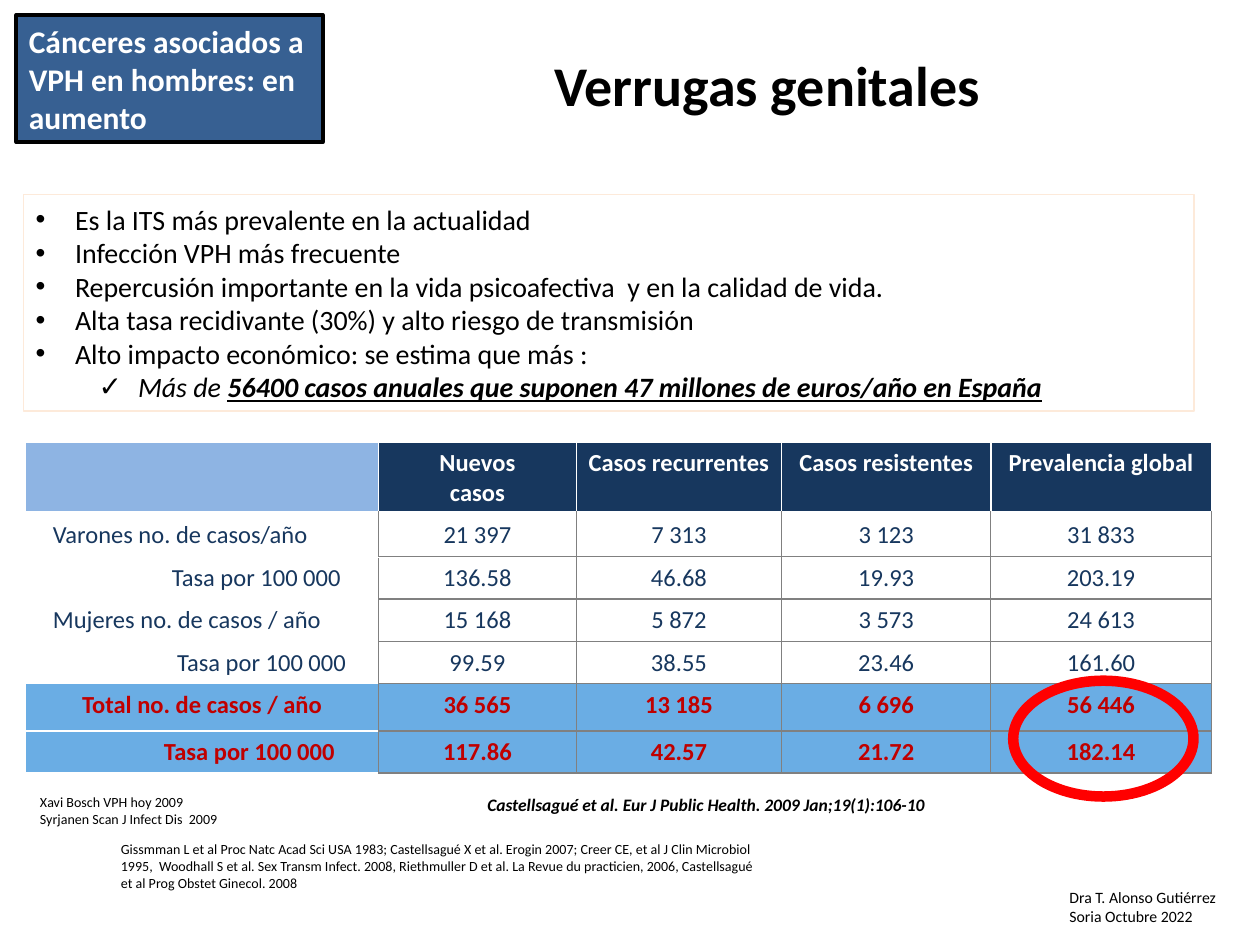
from dataclasses import dataclass, field

from lxml.etree import SubElement
from pptx import Presentation
from pptx.dml.color import RGBColor
from pptx.enum.shapes import MSO_SHAPE
from pptx.enum.text import MSO_ANCHOR, PP_ALIGN
from pptx.oxml import parse_xml
from pptx.oxml.ns import nsdecls, qn
from pptx.util import Pt


@dataclass(frozen=True)
class Theme:
    font: str = "Calibri"
    black: str = "000000"
    white: str = "FFFFFF"
    navy: str = "17375E"
    blue: str = "376092"
    pale_blue: str = "8EB4E3"
    total_blue: str = "6AADE4"
    cream: str = "FDEADA"
    grey: str = "808080"
    dark_red: str = "C00000"
    red: str = "FF0000"
    title: float = 32
    banner: float = 18
    body: float = 16
    table: float = 14
    source: float = 10
    author: float = 9
    note: float = 8


T = Theme()


@dataclass
class Para:
    runs: list  # (text, format dict) pairs
    align: PP_ALIGN = PP_ALIGN.LEFT
    left: float = 0
    hanging: float = 0
    bullet: str = ""


@dataclass
class Block:
    box: tuple  # left, top, width, height
    paras: list
    size: float
    color: str = T.black
    fill: str = ""
    line: tuple = ()  # colour, width
    shape: MSO_SHAPE = MSO_SHAPE.RECTANGLE


@dataclass
class Row:
    label: str
    values: list
    height: float
    indent: float = 0
    total: bool = False
    align: PP_ALIGN = PP_ALIGN.LEFT
    line: str = field(default=T.grey)


def plain(text: str, **kw) -> Para:
    return Para([(text, {})], **kw)


def write(tf, paras: list, size: float, color: str, **base) -> None:
    """Fill a text frame with formatted paragraphs."""
    tf.word_wrap = True
    for i, para in enumerate(paras):
        p = tf.paragraphs[0] if i == 0 else tf.add_paragraph()
        p.alignment = para.align
        pPr = p._p.get_or_add_pPr()
        if para.left:
            pPr.set("marL", str(Pt(para.left)))
            pPr.set("indent", str(-Pt(para.hanging)))
        if para.bullet:
            SubElement(pPr, qn("a:buFont")).set("typeface", "Arial")
            SubElement(pPr, qn("a:buChar")).set("char", para.bullet)
        for text, extra in para.runs:
            r = p.add_run()
            r.text = text
            fmt = {"name": T.font, "size": Pt(size), **base, **extra}
            for key, value in fmt.items():
                setattr(r.font, key, value)
            r.font.color.rgb = RGBColor.from_string(color)


def add_block(s, b: Block, **base) -> None:
    """Draw a text box, or a shape when it has a fill or an outline."""
    box = [Pt(v) for v in b.box]
    if b.line:
        sp = s.shapes.add_shape(b.shape, *box)
        sp.shadow.inherit = False
        if b.fill:
            sp.fill.solid()
            sp.fill.fore_color.rgb = RGBColor.from_string(b.fill)
        else:
            sp.fill.background()
        sp.line.color.rgb = RGBColor.from_string(b.line[0])
        sp.line.width = Pt(b.line[1])
    else:
        sp = s.shapes.add_textbox(*box)
    sp.text_frame.vertical_anchor = MSO_ANCHOR.MIDDLE if b.line else MSO_ANCHOR.TOP
    write(sp.text_frame, b.paras, b.size, b.color, **base)


def style_cell(cell, fill: str, borders: dict) -> None:
    """Set a cell's fill, margins and borders (side: colour, width)."""
    cell.fill.solid()
    cell.fill.fore_color.rgb = RGBColor.from_string(fill)
    cell.margin_left = cell.margin_right = Pt(6.5)
    cell.margin_top = cell.margin_bottom = Pt(3.6)
    tcPr = cell._tc.get_or_add_tcPr()
    for i, side in enumerate("LRTB"):
        color, width = borders[side]
        tcPr.insert(i, parse_xml(
            f'<a:ln{side} {nsdecls("a")} w="{Pt(width)}"><a:solidFill>'
            f'<a:srgbClr val="{color}"/></a:solidFill></a:ln{side}>'))


def add_cases_table(s, left: float, top: float, widths: list,
                    heads: list, head_height: float, rows: list) -> None:
    heights = [head_height] + [row.height for row in rows]
    tbl = s.shapes.add_table(len(heights), len(widths), Pt(left), Pt(top),
                             Pt(sum(widths)), Pt(sum(heights))).table
    tbl.first_row = tbl.horz_banding = False
    for col, width in zip(tbl.columns, widths):
        col.width = Pt(width)
    for tr, height in zip(tbl.rows, heights):
        tr.height = Pt(height)
    thin, thick, rule = (T.white, 1), (T.white, 3), (T.grey, 0.75)

    # Header row
    for j, lines in enumerate(heads):
        cell = tbl.cell(0, j)
        style_cell(cell, T.navy if lines else T.pale_blue,
                   {"L": thin, "R": thin, "T": thin, "B": thick})
        write(cell.text_frame, [plain(t, align=PP_ALIGN.CENTER) for t in lines],
              T.table, T.white, bold=True)

    # Body rows: open label column, ruled value columns
    for i, row in enumerate(rows, 1):
        fill, color = (T.total_blue, T.dark_red) if row.total else (T.white, T.navy)
        for j, text in enumerate([row.label] + row.values):
            edge = rule if j else thin
            cell = tbl.cell(i, j)
            style_cell(cell, fill, {"L": edge, "R": rule, "B": edge,
                                    "T": thick if i == 1 else edge})
            para = (plain(text, align=PP_ALIGN.CENTER) if j
                    else plain(text, align=row.align, left=row.indent))
            write(cell.text_frame, [para], T.table, color, bold=row.total)


def main() -> None:
    prs = Presentation()
    prs.slide_width, prs.slide_height = Pt(720), Pt(540)
    s = prs.slides.add_slide(prs.slide_layouts[5])

    # Title
    title = s.shapes.title
    for key, value in zip(("left", "top", "width", "height"), (273, 15, 331, 66)):
        setattr(title, key, Pt(value))
    title.text_frame.vertical_anchor = MSO_ANCHOR.MIDDLE
    write(title.text_frame, [plain("Verrugas genitales", align=PP_ALIGN.CENTER)],
          T.title, T.black, bold=True)

    # Key points
    points = ["Es la ITS más prevalente en la actualidad",
              "Infección VPH más frecuente",
              "Repercusión importante en la vida psicoafectiva  y en la calidad de vida.",
              "Alta tasa recidivante (30%) y alto riesgo de transmisión",
              "Alto impacto económico: se estima que más :"]
    paras = [plain(t, left=22.5, hanging=22.5, bullet="•") for t in points]
    paras.append(Para([
        ("Más de ", {"italic": True}),
        ("56400 casos anuales que suponen 47 millones de euros/año en España",
         {"italic": True, "bold": True, "underline": True}),
    ], left=58.5, hanging=22.5, bullet="✓"))
    add_block(s, Block((13.3, 111.3, 669, 123.6), paras, T.body,
                       fill=T.white, line=(T.cream, 0.75)))

    # References
    add_block(s, Block((62, 476.8, 381, 36), [plain(
        "Gissmman L et al Proc Natc Acad Sci USA 1983; Castellsagué X et al. Erogin 2007; "
        "Creer CE, et al J Clin Microbiol 1995,  Woodhall S et al. Sex Transm Infect. 2008, "
        "Riethmuller D et al. La Revue du practicien, 2006, Castellsagué et al Prog Obstet "
        "Ginecol. 2008")], T.note))
    add_block(s, Block((15.8, 450, 136, 26.6), [
        plain("Xavi Bosch VPH hoy 2009"),
        plain("Syrjanen Scan J Infect Dis  2009")], T.note))

    # Table of cases and rates
    rate = "Tasa por 100 000"
    add_cases_table(
        s, 14.7, 252.7, [201.6, 113, 117.4, 119.5, 126],
        [[], ["Nuevos", "casos"], ["Casos recurrentes"], ["Casos resistentes"],
         ["Prevalencia global"]], 39.8,
        [Row("Varones no. de casos/año", ["21 397", "7 313", "3 123", "31 833"], 24.7, 9),
         Row(rate, ["136.58", "46.68", "19.93", "203.19"], 24, 77),
         Row("Mujeres no. de casos / año", ["15 168", "5 872", "3 573", "24 613"], 24.4, 9),
         Row(rate, ["99.59", "38.55", "23.46", "161.60"], 24, 80),
         Row("Total no. de casos / año", ["36 565", "13 185", "6 696", "56 446"], 27,
             total=True, align=PP_ALIGN.CENTER),
         Row(rate, ["117.86", "42.57", "21.72", "182.14"], 24, 72.5, total=True)])

    # Table source
    add_block(s, Block((218.2, 450, 317, 19.4), [plain(
        "Castellsagué et al. Eur J Public Health. 2009 Jan;19(1):106-10",
        align=PP_ALIGN.RIGHT)], T.source), bold=True, italic=True)

    # Ring around the global totals
    add_block(s, Block((579, 389, 103, 66.2), [], T.body, line=(T.red, 6),
                       shape=MSO_SHAPE.OVAL))

    # Section banner
    add_block(s, Block((9.4, 8.6, 175, 72.7), [plain(
        "Cánceres asociados a VPH en hombres: en aumento")], T.banner, T.white,
        fill=T.blue, line=(T.black, 2.25)), bold=True)

    # Author and date
    add_block(s, Block((604, 504, 104, 29), [
        plain("Dra T. Alonso Gutiérrez"), plain("Soria Octubre 2022")], T.author))

    prs.save("out.pptx")


if __name__ == "__main__":
    main()
